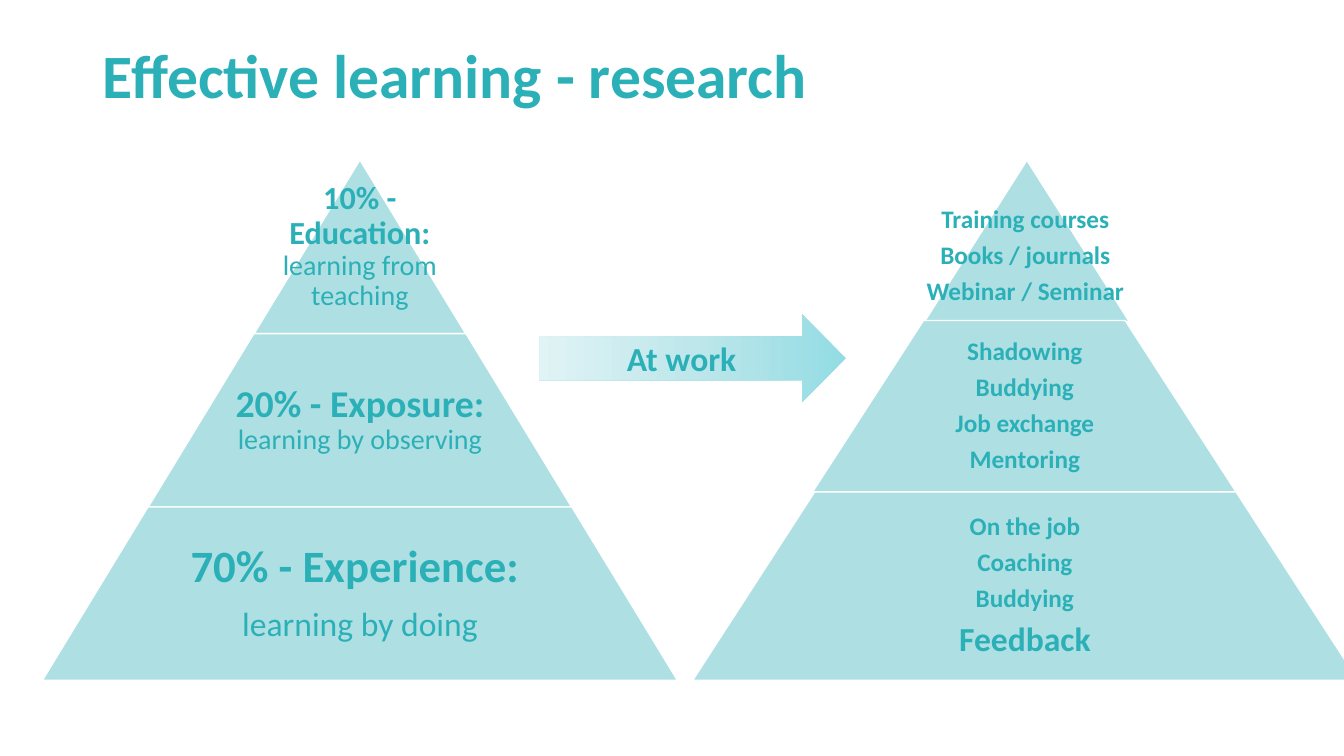
import copy
import pptx
import pptx.util
import pptx.dml.color
import pptx.enum.shapes
import pptx.enum.text
import pptx.oxml
import pptx.oxml.ns

Inches = pptx.util.Inches
Pt = pptx.util.Pt
RGBColor = pptx.dml.color.RGBColor
MSO_SHAPE = pptx.enum.shapes.MSO_SHAPE
MSO_ANCHOR = pptx.enum.text.MSO_ANCHOR
PP_ALIGN = pptx.enum.text.PP_ALIGN
qn = pptx.oxml.ns.qn

TEAL = RGBColor(0x2C, 0xB0, 0xB8)
WHITE = RGBColor(0xFF, 0xFF, 0xFF)
FADE = [
    (0, RGBColor(0x93, 0xDC, 0xE3)),
    (0.5, RGBColor(0xBE, 0xE7, 0xEB)),
    (1, RGBColor(0xE0, 0xF3, 0xF5)),
]


def style(run, size, bold=True):
    run.font.name = "Calibri"
    run.font.size = Pt(size)
    run.font.bold = bold
    run.font.color.rgb = TEAL


def add_tier(left, top, width, height, slant, box, inset, lines):
    tier = slide.shapes.add_shape(
        MSO_SHAPE.TRAPEZOID, Inches(left), Inches(top), Inches(width), Inches(height)
    )
    tier.adjustments[0] = slant
    tier.shadow.inherit = False
    tier.fill.solid()
    tier.fill.fore_color.rgb = TEAL
    color = tier.fill._xPr.find(qn("a:solidFill"))[0]
    pptx.oxml.ns.nsdecls("a")
    alpha = pptx.oxml.parse_xml(f'<a:alpha {pptx.oxml.ns.nsdecls("a")} val="38000"/>')
    color.append(alpha)
    tier.line.color.rgb = WHITE
    tier.line.width = Pt(1)

    x, y, wide = box
    label = slide.shapes.add_textbox(Inches(x), Inches(y), Inches(wide), Inches(height))
    frame = label.text_frame
    frame.word_wrap = True
    frame.vertical_anchor = MSO_ANCHOR.MIDDLE
    frame.margin_left = frame.margin_right = Inches(inset)
    frame.margin_top = frame.margin_bottom = Inches(inset)
    for i, parts in enumerate(lines):
        para = frame.add_paragraph() if i else frame.paragraphs[0]
        para.alignment = PP_ALIGN.CENTER
        para.line_spacing = 0.9
        para.space_after = Pt(round(parts[0][1] * 0.35, 1))
        for text, size, bold in parts:
            run = para.add_run()
            run.text = text
            style(run, size, bold)


deck = pptx.Presentation()
deck.slide_width = Inches(13.33)
deck.slide_height = Inches(7.5)
slide = deck.slides.add_slide(deck.slide_layouts[5])

title = slide.shapes.title
title.left, title.top = Inches(0.92), Inches(0.4)
title.width, title.height = Inches(11.5), Inches(1.45)
title.text_frame.text = "Effective learning - research"
title.text_frame.vertical_anchor = MSO_ANCHOR.TOP
head = title.text_frame.paragraphs[0]
head.alignment = PP_ALIGN.LEFT
head.line_spacing = 0.9
style(head.runs[0], 44)

TOP, STEP, MID = 1.59, 1.72, 3.57
shares = [
    (2.1, 0.03, [[("10% - Education: ", 23, True), ("learning from teaching", 20, False)]]),
    (2.73, 0.04, [[("20% - Exposure: ", 27, True), ("learning by observing", 20, False)]]),
    (4.09, 0.04, [[("70% - Experience: ", 32, True)], [("learning by doing", 24, False)]]),
]
for i, (wide, inset, lines) in enumerate(shares):
    width = 2.1 * (i + 1)
    top = TOP + i * STEP
    box = (MID - wide / 2, top, wide)
    add_tier(MID - width / 2, top, width, STEP, 0.609, box, inset, lines)

methods = [
    (9.17, 1.59, 2.03, 1.6, (8.87, 1.74, 2.6), 0.03,
     ["Training courses", "Books / journals", "Webinar / Seminar"]),
    (8.06, 3.18, 4.2, 1.7, (8.8, 3.18, 2.73), 0.04,
     ["Shadowing", "Buddying", "Job exchange", "Mentoring"]),
    (6.87, 4.88, 6.6, 1.87, (8.02, 4.88, 4.29), 0.04,
     ["On the job", "Coaching", "Buddying", "Feedback"]),
]
for left, top, width, height, box, inset, names in methods:
    lines = [[(name, 24 if name == "Feedback" else 18, True)] for name in names]
    add_tier(left, top, width, height, 0.647, box, inset, lines)

arrow = slide.shapes.add_shape(
    MSO_SHAPE.RIGHT_ARROW, Inches(5.35), Inches(3.12), Inches(3.04), Inches(0.87)
)
arrow.shadow.inherit = False
arrow.line.fill.background()
arrow.fill.gradient()
arrow.fill.gradient_angle = 180
stops = arrow._element.spPr.find(qn("a:gradFill")).find(qn("a:gsLst"))
stops.append(copy.deepcopy(stops[0]))
for stop, (place, color) in zip(arrow.fill.gradient_stops, FADE):
    stop.position = place
    stop.color.rgb = color
arrow.text_frame.text = "At work"
arrow.text_frame.vertical_anchor = MSO_ANCHOR.MIDDLE
work = arrow.text_frame.paragraphs[0]
work.alignment = PP_ALIGN.CENTER
style(work.runs[0], 24)

deck.save("out.pptx")
